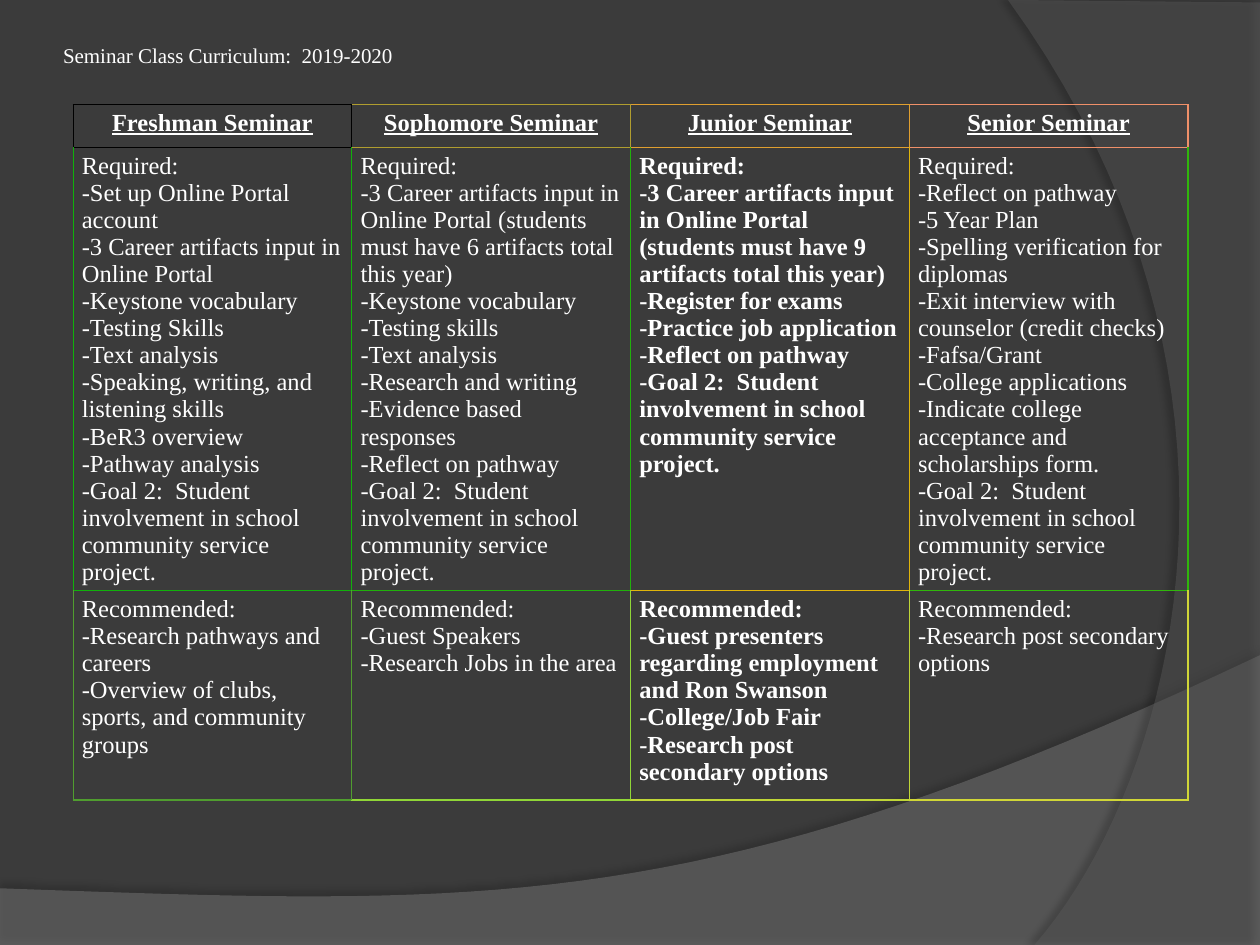
from lxml.etree import SubElement
from pptx import Presentation
from pptx.dml.color import RGBColor
from pptx.enum.text import MSO_ANCHOR, MSO_AUTO_SIZE, PP_ALIGN
from pptx.oxml.ns import qn
from pptx.util import Inches, Pt

FONT = "Times New Roman"
WHITE = RGBColor(0xFF, 0xFF, 0xFF)
BLACK = RGBColor(0x00, 0x00, 0x00)
DARK = RGBColor(0x3B, 0x3B, 0x3B)
GRAY = RGBColor(0x7F, 0x7F, 0x7F)
SLATE = RGBColor(0x5E, 0x5E, 0x5E)
EDGES = [
    [BLACK, RGBColor(0xB0, 0x9D, 0x2F), RGBColor(0xE0, 0x9F, 0x2F), RGBColor(0xF0, 0x90, 0x69)],
    [RGBColor(0x10, 0xB1, 0x0B), RGBColor(0x20, 0xB1, 0x0B),
     RGBColor(0xE0, 0xB5, 0x0B), RGBColor(0x30, 0xB7, 0x0B)],
    [RGBColor(0x50, 0x9D, 0x2F), RGBColor(0x90, 0xD6, 0x37),
     RGBColor(0xC0, 0xD6, 0x37), RGBColor(0xD0, 0xD6, 0x37)],
]

GOAL = "-Goal 2:  Student involvement in school community service project."
HEADS = ["Freshman Seminar", "Sophomore Seminar", "Junior Seminar", "Senior Seminar"]
NEEDS = [
    ["-Set up Online Portal account", "-3 Career artifacts input in Online Portal",
     "-Keystone vocabulary", "-Testing Skills", "-Text analysis",
     "-Speaking, writing, and listening skills", "-BeR3 overview", "-Pathway analysis", GOAL],
    ["-3 Career artifacts input in Online Portal (students must have 6 artifacts total this year)",
     "-Keystone vocabulary", "-Testing skills", "-Text analysis", "-Research and writing",
     "-Evidence based responses", "-Reflect on pathway", GOAL],
    ["-3 Career artifacts input in Online Portal (students must have 9 artifacts total this year)",
     "-Register for exams", "-Practice job application", "-Reflect on pathway", GOAL],
    ["-Reflect on pathway", "-5 Year Plan", "-Spelling verification for diplomas",
     "-Exit interview with counselor (credit checks)", "-Fafsa/Grant",
     "-College applications", "-Indicate college acceptance and scholarships form.", GOAL],
]
EXTRAS = [
    ["-Research pathways and careers", "-Overview of clubs, sports, and community groups"],
    ["-Guest Speakers", "-Research Jobs in the area"],
    ["-Guest presenters regarding employment and Ron Swanson", "-College/Job Fair",
     "-Research post secondary options"],
    ["-Research post secondary options"],
]
JUNIOR = 2


def bend(start, first, second, end, steps=40):
    points = []
    for step in range(steps + 1):
        t = step / steps
        parts = ((1 - t) ** 3, 3 * t * (1 - t) ** 2, 3 * t * t * (1 - t), t ** 3)
        points.append(tuple(sum(part * spot[axis] for part, spot
                                in zip(parts, (start, first, second, end)))
                            for axis in (0, 1)))
    return points


def add_wave(slide, left, top, points, color, alpha, shade, turn):
    spots = [(left + Inches(x), top + Inches(y)) for x, y in points]
    pen = slide.shapes.build_freeform(*spots[0])
    pen.add_line_segments(spots[1:], close=True)
    wave = pen.convert_to_shape()
    wave.fill.solid()
    wave.fill.fore_color.rgb = color
    wave.line.fill.background()
    tint = wave.fill._xPr.find(qn("a:solidFill"))[0]
    SubElement(tint, qn("a:alpha"), val=str(alpha * 1000))
    wave.shadow.inherit = False
    glow = SubElement(wave._element.spPr.find(qn("a:effectLst")), qn("a:outerShdw"),
                      blurRad=str(Pt(4)), dist=str(Pt(4)), dir=str(turn * 60000))
    ink = SubElement(glow, qn("a:srgbClr"), val=str(BLACK))
    SubElement(ink, qn("a:alpha"), val=str(shade * 1000))


def add_title(slide, left, top, width, height):
    title = slide.shapes.title
    title.left, title.top, title.width, title.height = left, top, width, height
    frame = title.text_frame
    frame.text = "Seminar Class Curriculum:  2019-2020"
    frame.margin_left = frame.margin_right = frame.margin_top = frame.margin_bottom = 0
    frame.vertical_anchor = MSO_ANCHOR.MIDDLE
    frame.auto_size = MSO_AUTO_SIZE.NONE
    frame.word_wrap = False
    style(frame.paragraphs[0], 12, PP_ALIGN.LEFT)


def style(para, size, align, bold=False, under=False):
    para.alignment = align
    font = para.font
    font.name, font.size, font.bold, font.underline = FONT, Pt(size), bold, under
    font.color.rgb = WHITE


def set_edges(cell, colors):
    props = cell._tc.get_or_add_tcPr()
    for index, (side, color) in enumerate(zip(("lnL", "lnR", "lnT", "lnB"), colors)):
        line = props.makeelement(qn("a:" + side), {"w": str(Pt(0.75))})
        props.insert(index, line)
        fill = SubElement(line, qn("a:solidFill"))
        SubElement(fill, qn("a:srgbClr"), val=str(color))


def add_grid(slide, left, top, width, heights):
    rows = [[[head] for head in HEADS],
            [["Required:"] + items for items in NEEDS],
            [["Recommended:"] + items for items in EXTRAS]]
    grid = slide.shapes.add_table(len(rows), len(HEADS), left, top, width, sum(heights)).table
    grid.first_row = grid.horz_banding = False
    for r, row in enumerate(rows):
        grid.rows[r].height = heights[r]
        for c, lines in enumerate(row):
            cell = grid.cell(r, c)
            cell.fill.background()
            cell.margin_left = cell.margin_right = Inches(0.07)
            cell.margin_top = cell.margin_bottom = Inches(0.04)
            cell.text = "\n".join(lines)
            head = r == 0
            for para in cell.text_frame.paragraphs:
                style(para, 14, PP_ALIGN.CENTER if head else PP_ALIGN.LEFT,
                      head or c == JUNIOR, head)
            own = EDGES[r][c]
            set_edges(cell, (EDGES[r][max(c - 1, 0)], own, EDGES[max(r - 1, 0)][c], own))


def main():
    deck = Presentation()
    deck.slide_width, deck.slide_height = Inches(10), Inches(7.5)
    slide = deck.slides.add_slide(deck.slide_layouts[5])
    slide.background.fill.solid()
    slide.background.fill.fore_color.rgb = DARK
    floor = [(0, 2.31), (10, 2.31)] + bend((10, 0), (5.59, 2.09), (3.91, 1.99), (0, 1.85))
    side = [(2, 0.02), (2, 7.5)] + bend((0.21, 7.5), (1.35, 6.19), (2.18, 3), (0, 0))
    add_wave(slide, 0, Inches(5.2), floor, GRAY, 45, 35, 270)
    add_wave(slide, Inches(8), 0, side, SLATE, 40, 45, 180)
    add_grid(slide, Inches(0.58), Inches(0.83), Inches(8.85),
             [Inches(0.34), Inches(3.27), Inches(1.66)])
    add_title(slide, Inches(0.5), Inches(0.33), Inches(9), Inches(0.22))
    deck.save("out.pptx")


if __name__ == "__main__":
    main()
